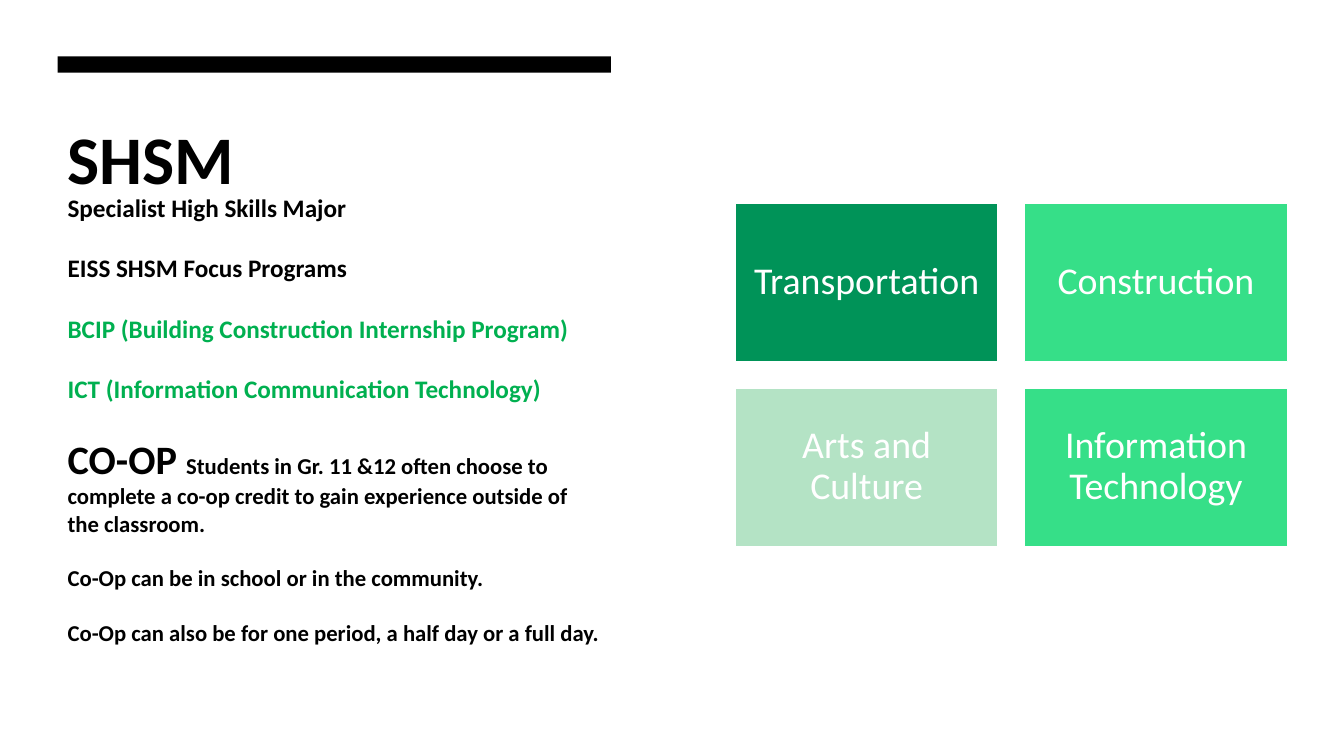
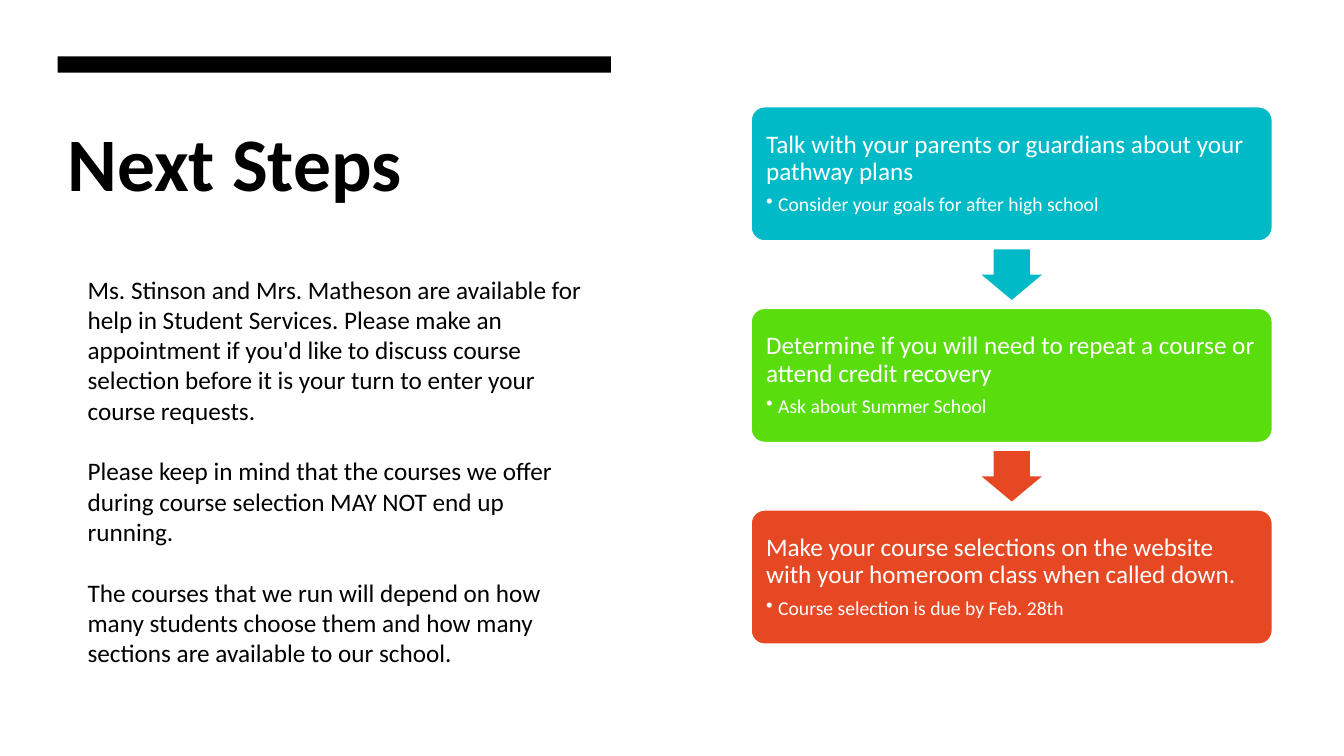
import pptx
import pptx.dml.color
import pptx.enum.shapes
import pptx.enum.text
import pptx.oxml
import pptx.oxml.ns
import pptx.util

Color = pptx.dml.color.RGBColor
Shape = pptx.enum.shapes.MSO_SHAPE
Anchor = pptx.enum.text.MSO_ANCHOR
Align = pptx.enum.text.PP_ALIGN
Inches, Pt = pptx.util.Inches, pptx.util.Pt

BLACK = Color(0x00, 0x00, 0x00)
WHITE = Color(0xFF, 0xFF, 0xFF)
PROGRAM_GREEN = Color(0x00, 0xB0, 0x50)
DEEP_GREEN = Color(0x00, 0x93, 0x58)
BRIGHT_GREEN = Color(0x36, 0xDF, 0x88)
PALE_GREEN = Color(0xB4, 0xE3, 0xC5)
TEAL = Color(0x00, 0xBA, 0xC8)
LIME = Color(0x59, 0xDD, 0x0C)
ORANGE = Color(0xE6, 0x48, 0x23)

WIDTH, HEIGHT = Inches(13.33), Inches(7.5)
FONT = "Calibri"
LEFT, COLUMN = 4.28, 41.18


def add_bullet(para, indent):
    """Hang the paragraph behind a round bullet, indent in inches."""
    properties = para._p.get_or_add_pPr()
    properties.set("marL", str(Inches(indent)))
    properties.set("indent", str(-Inches(indent)))
    bullet = pptx.oxml.parse_xml(
        f'<a:buChar {pptx.oxml.ns.nsdecls("a")} char="•"/>')
    properties.append(bullet)


def write(frame, text, size=18, color=BLACK, bold=False, align=Align.LEFT,
          spacing=1.0, before=0, after=0, bullet=0):
    """Add a paragraph; text is a string or a list of (text, size) spans."""
    first = frame.paragraphs[0]
    para = frame.add_paragraph() if first.runs else first
    if bullet:
        add_bullet(para, bullet)
    para.alignment = align
    para.line_spacing = spacing
    para.space_before, para.space_after = Pt(before), Pt(after)
    spans = [(text, size)] if isinstance(text, str) else text
    for words, points in spans:
        span = para.add_run()
        span.text = words
        span.font.name, span.font.size = FONT, Pt(points)
        span.font.bold = bold
        span.font.color.rgb = color


class Deck:
    """Places elements by percent of the slide's width and height."""

    def __init__(self):
        self.file = pptx.Presentation()
        self.file.slide_width, self.file.slide_height = WIDTH, HEIGHT
        self.page = None

    def area(self, left, top, width, height):
        return (int(WIDTH * left / 100), int(HEIGHT * top / 100),
                int(WIDTH * width / 100), int(HEIGHT * height / 100))

    def prepare(self, frame, anchor, side=0.1, edge=0.05):
        frame.word_wrap = True
        frame.auto_size = pptx.enum.text.MSO_AUTO_SIZE.NONE
        frame.vertical_anchor = anchor
        frame.margin_left = frame.margin_right = Inches(side)
        frame.margin_top = frame.margin_bottom = Inches(edge)
        return frame

    def new_page(self):
        """Start a slide with its black bar and return the title's frame."""
        self.page = self.file.slides.add_slide(self.file.slide_layouts[5])
        self.shape(Shape.RECTANGLE, (LEFT, 7.47, COLUMN, 2.13), BLACK)
        title = self.page.shapes.title
        title.left, title.top, title.width, title.height = self.area(
            LEFT, 14.67, COLUMN, 71.07)
        return self.prepare(title.text_frame, Anchor.TOP)

    def shape(self, kind, place, fill, outline=None, adjustments=()):
        shape = self.page.shapes.add_shape(kind, *self.area(*place))
        shape.shadow.inherit = False
        shape.fill.solid()
        shape.fill.fore_color.rgb = fill
        if outline is None:
            shape.line.fill.background()
        else:
            shape.line.color.rgb = outline
            shape.line.width = Pt(1)
        for index, value in enumerate(adjustments):
            shape.adjustments[index] = value
        return shape

    def tile(self, place, label, fill):
        box = self.shape(Shape.RECTANGLE, place, fill, WHITE)
        frame = self.prepare(box.text_frame, Anchor.MIDDLE, 0.11, 0.11)
        write(frame, label, size=27, color=WHITE, align=Align.CENTER,
              spacing=0.9, after=9.45)

    def card(self, place, heading, detail, fill):
        box = self.shape(Shape.ROUNDED_RECTANGLE, place, fill, WHITE, [0.1])
        frame = self.prepare(box.text_frame, Anchor.MIDDLE, 0.11, 0.11)
        write(frame, heading, color=WHITE, spacing=0.9, after=6.3)
        write(frame, detail, size=14, color=WHITE, spacing=0.9, after=2.1,
              bullet=0.12)

    def text(self, place, paragraphs, gap):
        box = self.page.shapes.add_textbox(*self.area(*place))
        frame = self.prepare(box.text_frame, Anchor.TOP)
        for index, words in enumerate(paragraphs):
            write(frame, words, before=gap if index else 0)


def build_programs(deck):
    title = deck.new_page()
    write(title, "SHSM", size=48.6, bold=True)
    write(title, "Specialist High Skills Major", bold=True, spacing=0.83)
    write(title, "EISS SHSM Focus Programs", bold=True, before=21.5)
    for program in ("BCIP (Building Construction Internship Program)",
                    "ICT (Information Communication Technology)"):
        write(title, program, color=PROGRAM_GREEN, bold=True, before=21.5)
    write(title, [("CO-OP ", 28.8),
                  ("Students in Gr. 11 &12 often choose to complete a co-op "
                   "credit to gain experience outside of the classroom.",
                   16.2)], bold=True, before=21.5)
    for note in ("Co-Op can be in school or in the community.",
                 "Co-Op can also be for one period, a half day or a full day."):
        write(title, note, size=16.2, bold=True, before=19.5)

    tiles = [("Transportation", DEEP_GREEN), ("Construction", BRIGHT_GREEN),
             ("Arts and Culture", PALE_GREEN),
             ("Information Technology", BRIGHT_GREEN)]
    for index, (label, fill) in enumerate(tiles):
        row, column = divmod(index, 2)
        deck.tile((54.69 + 21.53 * column, 26.93 + 24.4 * row, 19.58, 20.93),
                  label, fill)


def build_next_steps(deck):
    write(deck.new_page(), "Next Steps", size=54, bold=True)
    deck.text((5.78, 35.6, 38.48, 53.87), [
        "Ms. Stinson and Mrs. Matheson are available for help in Student "
        "Services. Please make an appointment if you'd like to discuss course "
        "selection before it is your turn to enter your course requests.",
        "Please keep in mind that the courses we offer during course "
        "selection MAY NOT end up running.",
        "The courses that we run will depend on how many students choose them "
        "and how many sections are available to our school."], gap=21.8)

    steps = [
        ("Talk with your parents or guardians about your pathway plans",
         "Consider your goals for after high school", TEAL),
        ("Determine if you will need to repeat a course or attend credit "
         "recovery", "Ask about Summer School", LIME),
        ("Make your course selections on the website with your homeroom class "
         "when called down.", "Course selection is due by Feb. 28th", ORANGE)]
    left, first_top, width, height, pitch = 55.89, 14.13, 38.78, 17.73, 26.67
    for index, (heading, detail, fill) in enumerate(steps):
        deck.card((left, first_top + pitch * index, width, height),
                  heading, detail, fill)

    arrow_width, arrow_height = 4.5, 6.67
    arrow_left = left + (width - arrow_width) / 2
    arrow_top = first_top + (height + pitch - arrow_height) / 2
    for index, fill in enumerate((TEAL, ORANGE)):
        deck.shape(Shape.DOWN_ARROW,
                   (arrow_left, arrow_top + pitch * index,
                    arrow_width, arrow_height), fill, adjustments=(0.6, 0.5))


def main():
    deck = Deck()
    build_programs(deck)
    build_next_steps(deck)
    deck.file.save("out.pptx")


if __name__ == "__main__":
    main()
